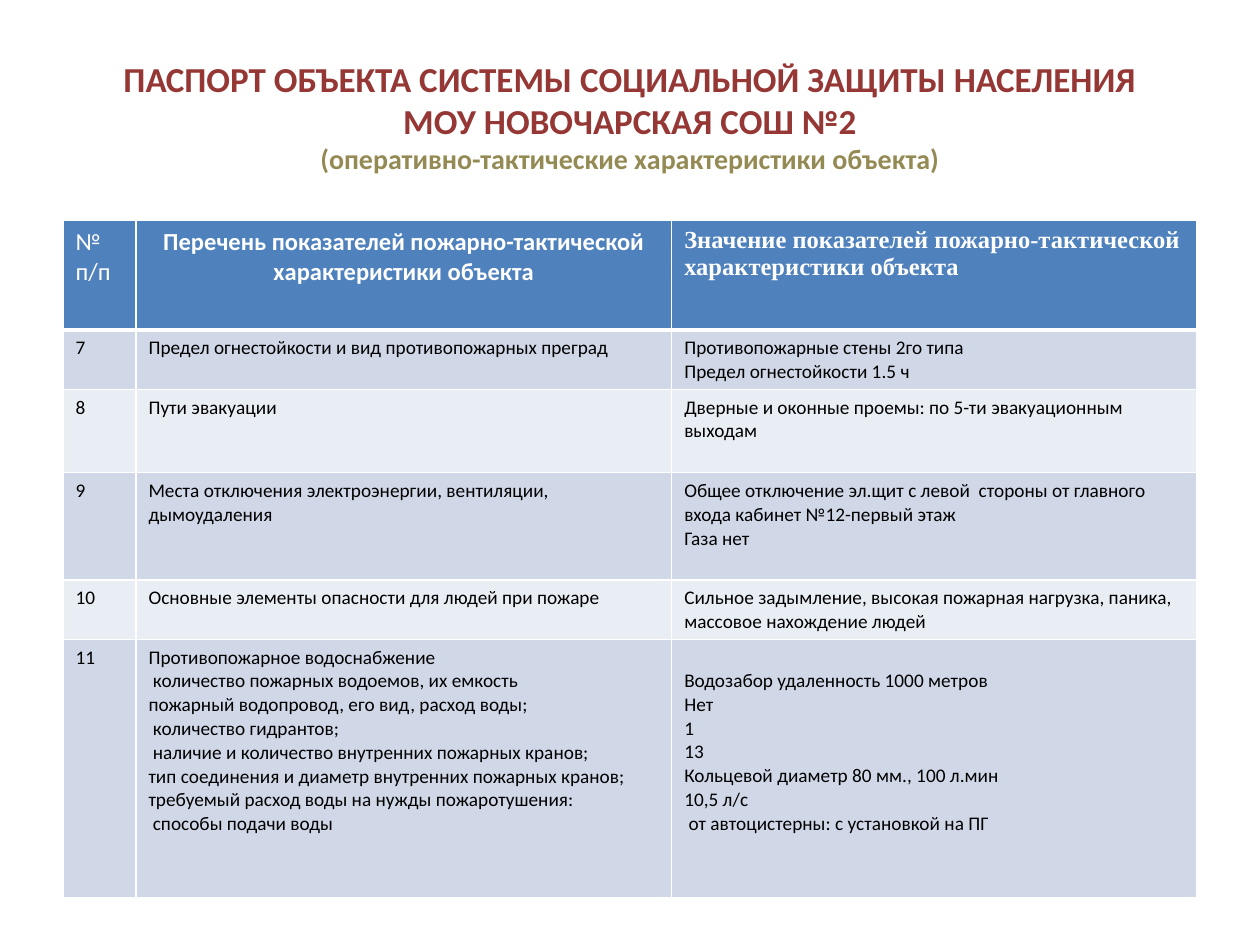
import pptx
import pptx.util
import pptx.dml.color
import pptx.enum.text
import pptx.oxml.ns
from lxml import etree

Cm = pptx.util.Cm
Pt = pptx.util.Pt
RGBColor = pptx.dml.color.RGBColor
ALIGN = pptx.enum.text.PP_ALIGN
ANCHOR = pptx.enum.text.MSO_ANCHOR

WHITE = RGBColor(0xFF, 0xFF, 0xFF)
BLACK = RGBColor(0x00, 0x00, 0x00)
DARK_RED = RGBColor(0x95, 0x37, 0x35)
OLIVE = RGBColor(0x94, 0x8A, 0x54)
HEADER_BLUE = RGBColor(0x4F, 0x81, 0xBD)
BAND_DARK = RGBColor(0xD0, 0xD8, 0xE8)
BAND_LIGHT = RGBColor(0xE9, 0xED, 0xF4)

COLUMN_WIDTHS = (1.47, 10.8, 10.59)
ROW_HEIGHTS = (2.2, 1.2, 1.68, 2.16, 1.2, 5.2)

HEADINGS = (
    ("№ п/п", {}),
    ("Перечень показателей пожарно-тактической характеристики объекта",
     {"bold": True, "align": ALIGN.CENTER}),
    ("Значение показателей пожарно-тактической характеристики объекта",
     {"bold": True, "font": "Times New Roman"}),
)

INDICATORS = (
    ("7", ["Предел огнестойкости и вид противопожарных преград"],
     ["Противопожарные стены 2го типа", "Предел огнестойкости 1.5 ч"]),
    ("8", ["Пути эвакуации"],
     ["Дверные и оконные проемы: по 5-ти эвакуационным выходам"]),
    ("9", ["Места отключения электроэнергии, вентиляции, дымоудаления"],
     ["Общее отключение эл.щит с левой  стороны от главного входа "
      "кабинет №12-первый этаж", "Газа нет"]),
    ("10", ["Основные элементы опасности для людей при пожаре"],
     ["Сильное задымление, высокая пожарная нагрузка, паника, "
      "массовое нахождение людей"]),
    ("11", ["Противопожарное водоснабжение",
            " количество пожарных водоемов, их емкость",
            "пожарный водопровод, его вид, расход воды;",
            " количество гидрантов;",
            " наличие и количество внутренних пожарных кранов;",
            "тип соединения и диаметр внутренних пожарных кранов;",
            "требуемый расход воды на нужды пожаротушения:",
            " способы подачи воды"],
     ["Водозабор удаленность 1000 метров", "Нет", "1", "13",
      "Кольцевой диаметр 80 мм., 100 л.мин", "10,5 л/с",
      " от автоцистерны: с установкой на ПГ"]),
)


def write(paragraph, text, size=11, color=BLACK, bold=False, font="Calibri",
          align=ALIGN.LEFT):
    """Append text to the paragraph; each newline becomes a line break."""
    paragraph.alignment = align
    for number, line in enumerate(text.split("\n")):
        if number:
            paragraph.add_line_break()
        if line:
            run = paragraph.add_run()
            run.text = line
            run.font.size = Pt(size)
            run.font.bold = bold
            run.font.name = font
            run.font.color.rgb = color


class PassportSlide:
    """Holds the table style and the slide being built."""

    border_color = WHITE
    border_width = 1
    header_rule_width = 3

    def __init__(self, presentation):
        self.slide = presentation.slides.add_slide(presentation.slide_layouts[6])

    def title(self, left, top, width, height, parts):
        box = self.slide.shapes.add_textbox(Cm(left), Cm(top), Cm(width), Cm(height))
        frame = box.text_frame
        frame.word_wrap = True
        frame.vertical_anchor = ANCHOR.MIDDLE
        for text, style in parts:
            write(frame.paragraphs[0], text, bold=True, align=ALIGN.CENTER, **style)

    def table(self, left, top, column_widths, row_heights):
        frame = self.slide.shapes.add_table(
            len(row_heights), len(column_widths), Cm(left), Cm(top),
            Cm(sum(column_widths)), Cm(sum(row_heights)))
        for column, width in zip(frame.table.columns, column_widths):
            column.width = Cm(width)
        for row, height in zip(frame.table.rows, row_heights):
            row.height = Cm(height)
        return frame.table

    def cell(self, cell, lines, fill, bottom_width=border_width, **style):
        self.borders(cell, bottom_width)
        cell.fill.solid()
        cell.fill.fore_color.rgb = fill
        frame = cell.text_frame
        for number, line in enumerate(lines):
            paragraph = frame.add_paragraph() if number else frame.paragraphs[0]
            write(paragraph, line, **style)

    def borders(self, cell, bottom_width):
        qn = pptx.oxml.ns.qn
        properties = cell._tc.get_or_add_tcPr()
        for side in "LRTB":
            width = bottom_width if side == "B" else self.border_width
            line = etree.SubElement(properties, qn(f"a:ln{side}"), w=str(Pt(width)))
            solid = etree.SubElement(line, qn("a:solidFill"))
            etree.SubElement(solid, qn("a:srgbClr"), val=str(self.border_color))


def main():
    presentation = pptx.Presentation()
    presentation.slide_width = Cm(25.4)
    presentation.slide_height = Cm(19.05)
    passport = PassportSlide(presentation)

    passport.title(1.27, 0.76, 22.86, 3.18, (
        ("ПАСПОРТ ОБЪЕКТА СИСТЕМЫ СОЦИАЛЬНОЙ ЗАЩИТЫ НАСЕЛЕНИЯ\n"
         "МОУ НОВОЧАРСКАЯ СОШ №2\n", {"size": 20, "color": DARK_RED}),
        ("(оперативно-тактические характеристики объекта)",
         {"size": 16, "color": OLIVE}),
    ))

    table = passport.table(1.27, 4.45, COLUMN_WIDTHS, ROW_HEIGHTS)
    for column, (heading, style) in enumerate(HEADINGS):
        passport.cell(table.cell(0, column), [heading], HEADER_BLUE,
                      bottom_width=passport.header_rule_width,
                      size=14, color=WHITE, **style)
    for row, (number, indicator, value) in enumerate(INDICATORS, start=1):
        band = BAND_DARK if row % 2 else BAND_LIGHT
        for column, lines in enumerate(([number], indicator, value)):
            passport.cell(table.cell(row, column), lines, band)

    # The water supply values start one line lower, beside their indicators.
    table.cell(len(INDICATORS), 2).margin_top = Cm(0.6)

    presentation.save("out.pptx")


if __name__ == "__main__":
    main()
